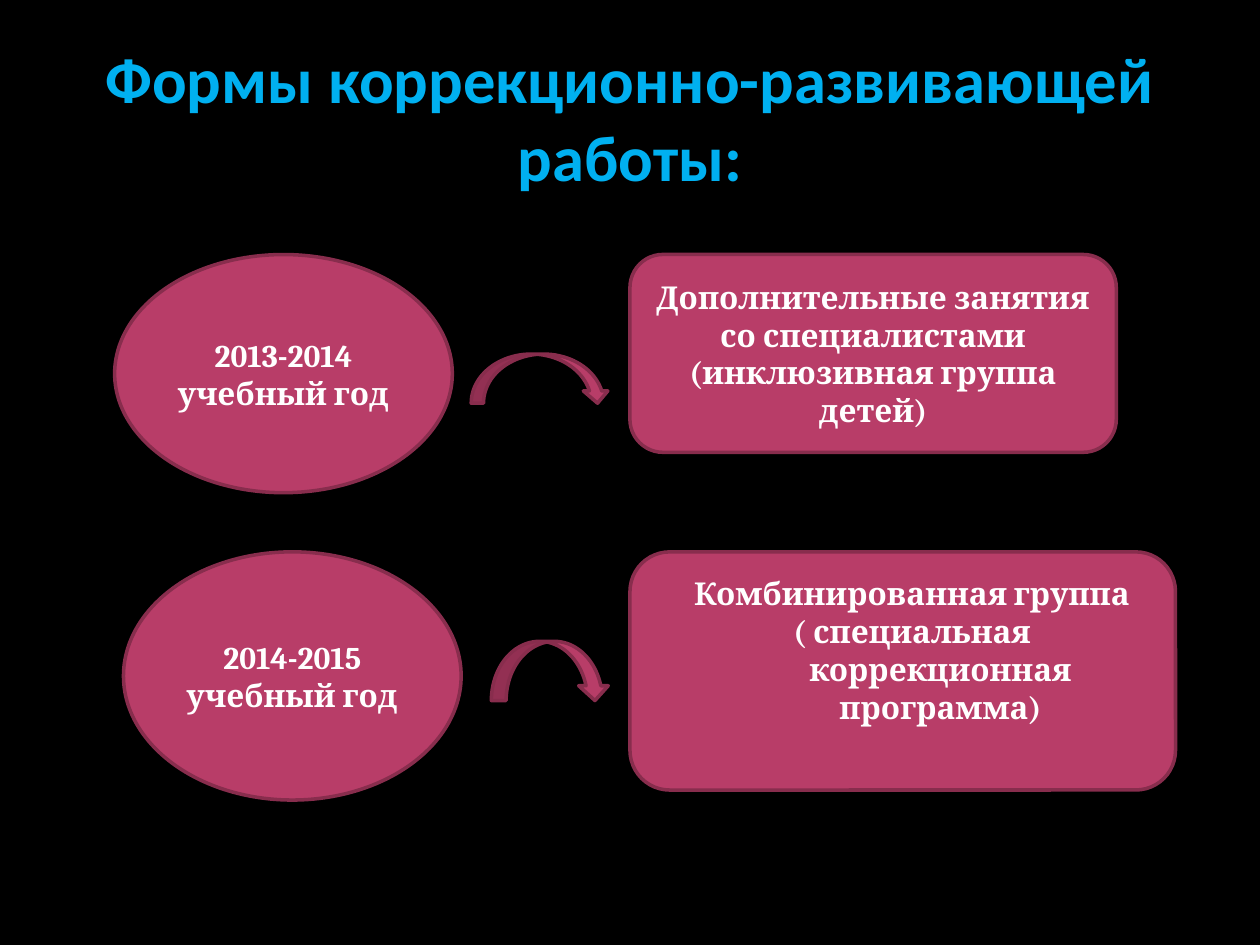
from dataclasses import dataclass

from pptx import Presentation
from pptx import util as u
from pptx.dml.color import RGBColor
from pptx.enum import shapes, text

# The slide is a grid of 100 columns by 75 rows.
COLS, ROWS = 100, 75
CELL = u.Inches(0.1)


@dataclass(frozen=True)
class Theme:
    background: str = "000000"
    title: str = "00B0F0"
    fill: str = "B83D68"
    line: str = "882D4D"
    text: str = "FFFFFF"
    title_font: str = "Calibri"
    body_font: str = "Cambria"
    title_size: float = 36.9
    body_size: float = 18
    line_width: float = 2


T = Theme()


@dataclass(frozen=True)
class Year:
    """One school year: part boxes are (column, row, columns, rows) from the row's corner."""
    corner: tuple
    label: str
    oval: tuple
    arrow: tuple
    card: tuple
    forms: tuple
    hanging: bool = False


YEARS = (
    Year((9.1, 20.2), "2013-2014 учебный год",
         oval=(0, 0, 26.8, 18.9), arrow=(28.3, 7.9, 11, 3.9), card=(40.9, 0, 38.6, 15.7),
         forms=("Дополнительные занятия со специалистами", "(инклюзивная группа детей)")),
    Year((9.8, 43.8), "2014-2015 учебный год",
         oval=(0, 0, 26.8, 19.7), arrow=(29.2, 7.1, 9.4, 4.7), card=(40.2, 0, 43.3, 18.9),
         forms=("Комбинированная группа", "( специальная коррекционная программа)"),
         hanging=True),
)


def cells(*counts):
    return [int(n * CELL) for n in counts]


def write(sp, lines, font, size, color):
    tf = sp.text_frame
    tf.word_wrap = True
    tf.vertical_anchor = text.MSO_ANCHOR.MIDDLE
    for i, line in enumerate(lines):
        p = tf.add_paragraph() if i else tf.paragraphs[0]
        p.text = line
        p.alignment = text.PP_ALIGN.CENTER
        p.font.name, p.font.size, p.font.bold = font, u.Pt(size), True
        p.font.color.rgb = RGBColor.from_string(color)


def hang(sp):
    """Gives hanging indents and lifts the text above the middle."""
    tf = sp.text_frame
    tf.margin_bottom = u.Inches(0.38)
    for p in tf.paragraphs:
        pPr = p._p.get_or_add_pPr()
        pPr.set("marL", str(u.Inches(0.6)))
        pPr.set("indent", str(u.Inches(-0.45)))


def add_part(s, corner, kind, box, lines=()):
    col, row, width, height = box
    sp = s.shapes.add_shape(kind, *cells(corner[0] + col, corner[1] + row, width, height))
    sp.shadow.inherit = False
    sp.fill.solid()
    sp.fill.fore_color.rgb = RGBColor.from_string(T.fill)
    sp.line.color.rgb = RGBColor.from_string(T.line)
    sp.line.width = u.Pt(T.line_width)
    if lines:
        write(sp, lines, T.body_font, T.body_size, T.text)
    return sp


def add_title(s, box, title):
    sp = s.shapes.add_textbox(*cells(*box))
    write(sp, [title], T.title_font, T.title_size, T.title)


def add_year(s, year):
    kind = shapes.MSO_SHAPE
    add_part(s, year.corner, kind.OVAL, year.oval, [year.label])
    card = add_part(s, year.corner, kind.ROUNDED_RECTANGLE, year.card, year.forms)
    if year.hanging:
        hang(card)
    add_part(s, year.corner, kind.CURVED_DOWN_ARROW, year.arrow)


def main():
    prs = Presentation()
    prs.slide_width, prs.slide_height = cells(COLS, ROWS)
    s = prs.slides.add_slide(prs.slide_layouts[6])
    s.background.fill.solid()
    s.background.fill.fore_color.rgb = RGBColor.from_string(T.background)
    add_title(s, (5, 3, 90, 12.5), "Формы коррекционно-развивающей работы:")
    for year in YEARS:
        add_year(s, year)
    prs.save("out.pptx")


if __name__ == "__main__":
    main()
